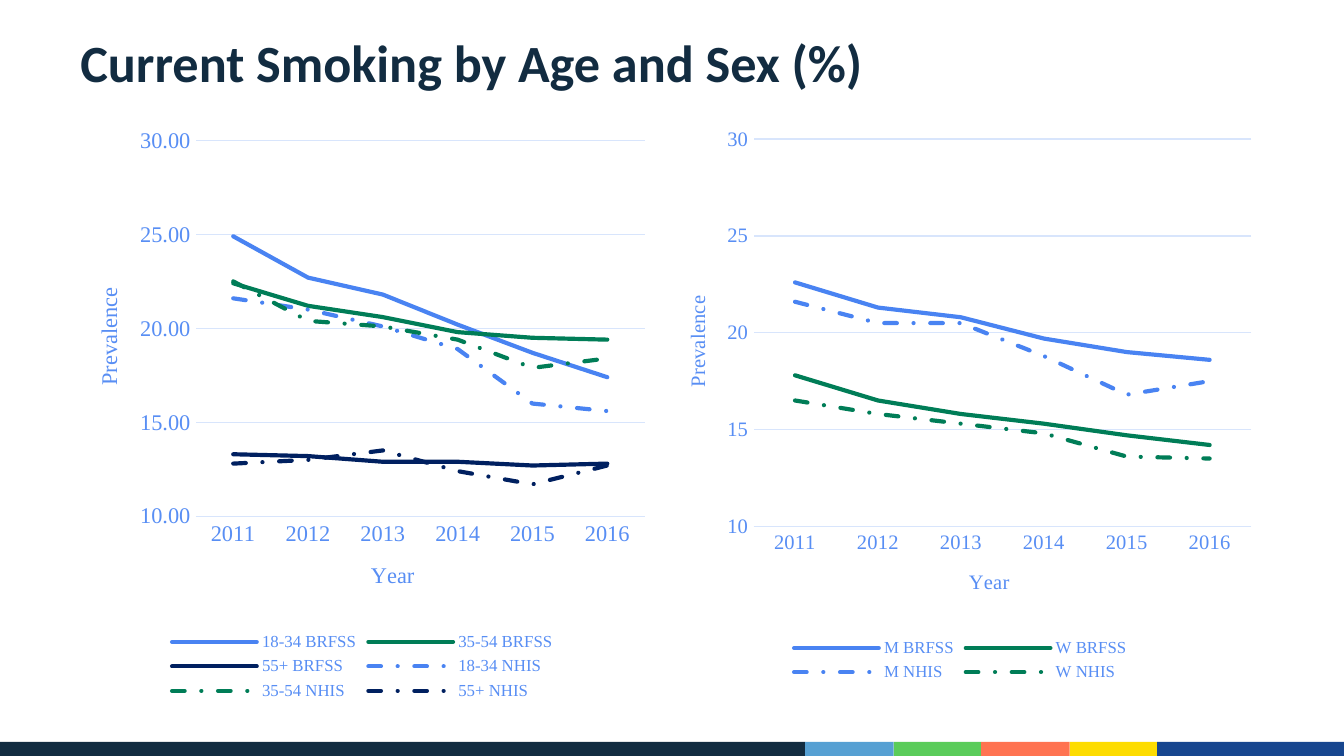
from lxml import etree
from pptx import Presentation
from pptx.chart.data import CategoryChartData
from pptx.dml.color import RGBColor
from pptx.enum.chart import XL_CHART_TYPE as ChartType
from pptx.enum.chart import XL_LEGEND_POSITION as LegendPosition
from pptx.enum.chart import XL_TICK_MARK as TickMark
from pptx.enum.dml import MSO_LINE as LineDash
from pptx.enum.shapes import MSO_SHAPE as ShapeType
from pptx.enum.text import MSO_ANCHOR as Anchor
from pptx.oxml.ns import qn
from pptx.util import Inches, Pt

# Content
TITLE = "Current Smoking by Age and Sex (%)"
YEARS = ["2011", "2012", "2013", "2014", "2015", "2016"]
NAVY, BLUE, GREEN, DARK = "122C41", "4983F2", "007D57", "002060"
LABEL, GRID = "588EF4", "D8E5FC"
CHART_FONT = "Times New Roman"

# Layouts are percentages of the chart: x, y and, where sized, width, height
CHARTS = [
    {
        "box": (0.5, 0.87, 4.39, 4.39), "size": 12, "format": "0.00",
        "plot": (21.8, 4, 76.1, 63.7),
        "legend": (16.6, 86.5, 66.8, 13.3),
        "year": (50.8, 74.7), "prevalence": (4, 28.2),
        "series": [
            ("18-34 BRFSS", BLUE, [24.9, 22.7, 21.8, 20.2, 18.7, 17.4]),
            ("35-54 BRFSS", GREEN, [22.4, 21.2, 20.6, 19.8, 19.5, 19.4]),
            ("55+ BRFSS", DARK, [13.3, 13.2, 12.9, 12.9, 12.7, 12.8]),
            ("18-34 NHIS", BLUE, [21.6, 21, 20.1, 18.9, 16, 15.6]),
            ("35-54 NHIS", GREEN, [22.5, 20.4, 20.1, 19.4, 17.9, 18.4]),
            ("55+ NHIS", DARK, [12.8, 13, 13.5, 12.4, 11.7, 12.7]),
        ],
    },
    {
        "box": (4.89, 0.87, 4.51, 4.25), "size": 11, "format": "0",
        "plot": (15.9, 3.9, 82.1, 67.8),
        "legend": (21.5, 90.5, 57, 9.2),
        "year": (50.8, 78.4), "prevalence": (3.9, 30.6),
        "series": [
            ("M BRFSS", BLUE, [22.6, 21.3, 20.8, 19.7, 19, 18.6]),
            ("W BRFSS", GREEN, [17.8, 16.5, 15.8, 15.3, 14.7, 14.2]),
            ("M NHIS", BLUE, [21.6, 20.5, 20.5, 18.8, 16.8, 17.5]),
            ("W NHIS", GREEN, [16.5, 15.8, 15.3, 14.8, 13.6, 13.5]),
        ],
    },
]

# Footer band: colour and left edge; each strip runs to the next one
FOOTER = [(NAVY, 0), ("56A0D3", 5.99), ("5ACC5A", 6.65), ("FF7351", 7.3),
          ("FDDC00", 7.96), ("17468F", 8.61)]
SLIDE_WIDTH, FOOTER_TOP = 10, 5.52
SLIDE_HEIGHT = SLIDE_WIDTH * 9 / 16


def rgb(color):
    return RGBColor.from_string(color)


def set_font(font, size, color, name=CHART_FONT, bold=False):
    font.size, font.name, font.bold = Pt(size), name, bold
    font.color.rgb = rgb(color)


def set_layout(element, index, percentages, inner=False):
    """Give a chart part a manual position."""
    for old in element.findall(qn("c:layout")):
        element.remove(old)
    layout = etree.Element(qn("c:layout"))
    manual = etree.SubElement(layout, qn("c:manualLayout"))
    settings = [("layoutTarget", "inner")] if inner else []
    settings += [("xMode", "edge"), ("yMode", "edge")]
    settings += [(tag, value / 100) for tag, value in zip("xywh", percentages)]
    for tag, value in settings:
        etree.SubElement(manual, qn("c:" + tag)).set("val", str(value))
    element.insert(index, layout)


def style_axis(axis, title, position, size):
    axis.major_tick_mark = axis.minor_tick_mark = TickMark.NONE
    set_font(axis.tick_labels.font, size, LABEL)
    axis.axis_title.text_frame.text = title
    set_font(axis.axis_title.text_frame.paragraphs[0].font, size, LABEL)
    set_layout(axis.axis_title._element, 1, position)


def add_line_chart(slide, content):
    data = CategoryChartData()
    data.categories = YEARS
    for name, _, values in content["series"]:
        data.add_series(name, values)
    chart = slide.shapes.add_chart(
        ChartType.LINE, *map(Inches, content["box"]), data).chart
    size = content["size"]
    set_font(chart.font, size, LABEL)
    chart.has_title = False

    # Axes
    years, values = chart.category_axis, chart.value_axis
    style_axis(years, "Year", content["year"], size)
    style_axis(values, "Prevalence", content["prevalence"], size)
    values.minimum_scale, values.maximum_scale, values.major_unit = 10, 30, 5
    values.tick_labels.number_format = content["format"]
    values.tick_labels.number_format_is_linked = False
    values.format.line.fill.background()
    for line in (years.format.line, values.major_gridlines.format.line):
        line.color.rgb = rgb(GRID)
        line.width = Pt(0.75)

    # Lines: solid for BRFSS, dashed for NHIS
    for series, (name, color, _) in zip(chart.plots[0].series, content["series"]):
        series.smooth = False
        line = series.format.line
        line.color.rgb = rgb(color)
        line.width = Pt(2.25)
        line._get_or_add_ln().set("cap", "rnd")
        if name.endswith("NHIS"):
            line.dash_style = LineDash.DASH_DOT

    # Legend and plot position
    chart.has_legend = True
    chart.legend.position = LegendPosition.BOTTOM
    chart.legend.include_in_layout = False
    set_font(chart.legend.font, 9, LABEL)
    set_layout(chart.legend._element, 1, content["legend"])
    plot_area = chart._chartSpace.find(".//" + qn("c:plotArea"))
    set_layout(plot_area, 0, content["plot"], inner=True)


presentation = Presentation()
presentation.slide_width = Inches(SLIDE_WIDTH)
presentation.slide_height = Inches(SLIDE_HEIGHT)
slide = presentation.slides.add_slide(presentation.slide_layouts[6])

# Footer band
edges = [left for _, left in FOOTER] + [SLIDE_WIDTH]
for (color, left), right in zip(FOOTER, edges[1:]):
    strip = slide.shapes.add_shape(
        ShapeType.RECTANGLE, Inches(left), Inches(FOOTER_TOP),
        Inches(right - left), Inches(SLIDE_HEIGHT - FOOTER_TOP))
    strip.shadow.inherit = False
    strip.fill.solid()
    strip.fill.fore_color.rgb = rgb(color)
    strip.line.fill.background()

# Title
title = slide.shapes.add_textbox(Inches(0.5), Inches(0.23), Inches(9), Inches(0.94))
title.text_frame.word_wrap = True
title.text_frame.vertical_anchor = Anchor.TOP
paragraph = title.text_frame.paragraphs[0]
paragraph.text = TITLE
paragraph.line_spacing = Pt(30)
set_font(paragraph.font, 28, NAVY, "Calibri", bold=True)

# Charts
for content in CHARTS:
    add_line_chart(slide, content)

presentation.save("out.pptx")
